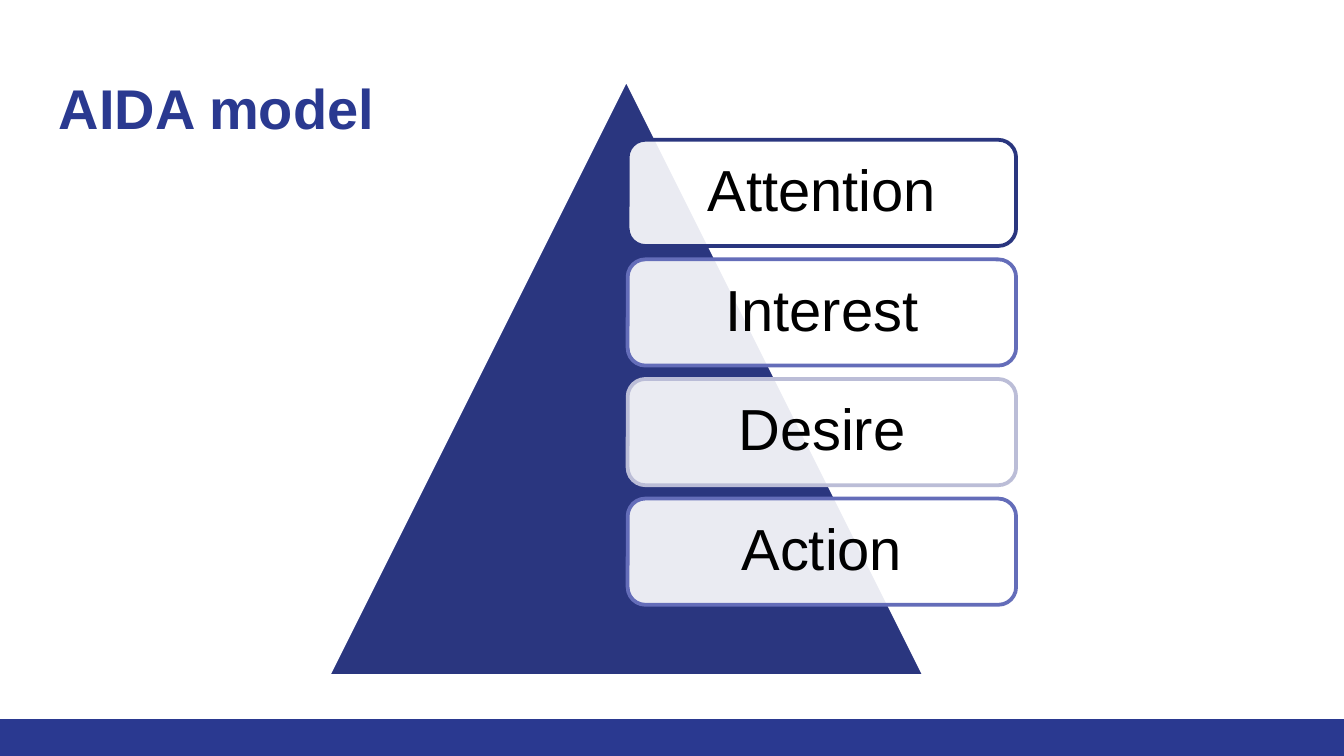
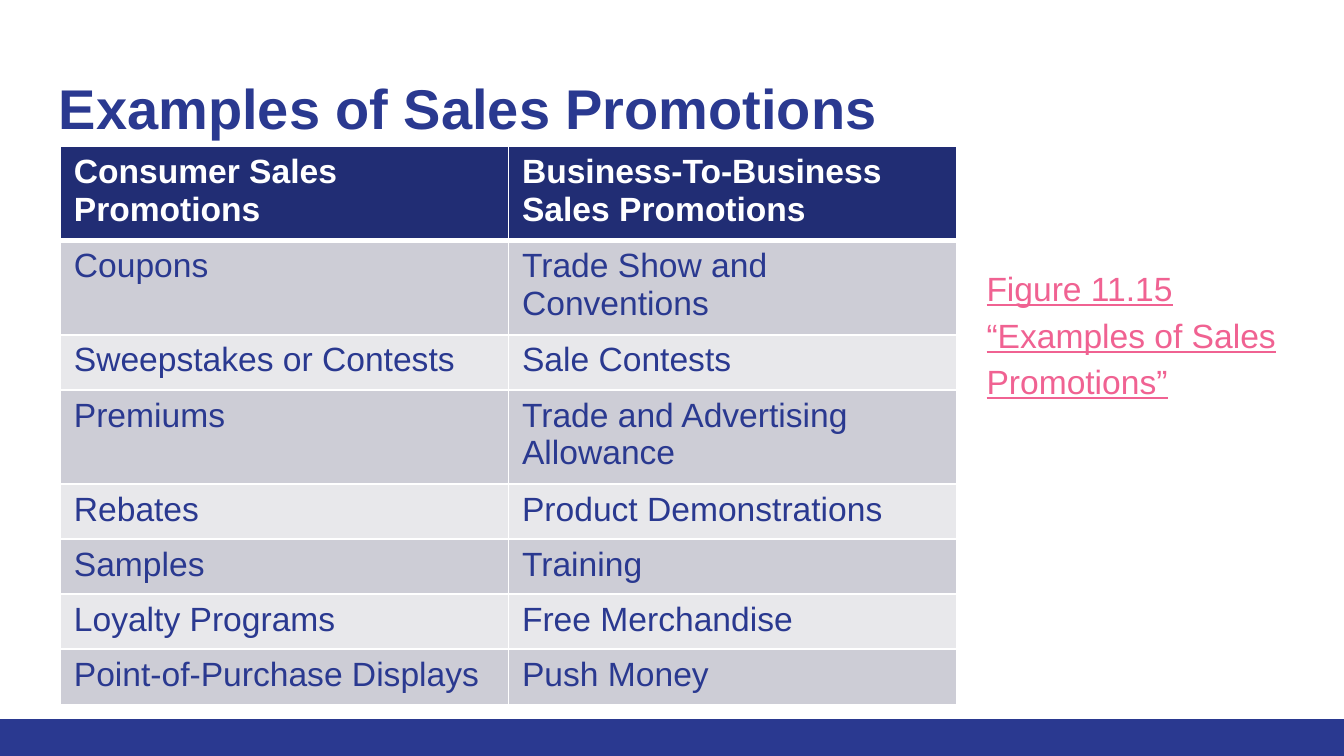
from dataclasses import dataclass
from typing import Optional

from lxml import etree
from pptx import Presentation
from pptx.dml.color import RGBColor
from pptx.enum.shapes import MSO_SHAPE
from pptx.enum.text import MSO_ANCHOR, PP_ALIGN
from pptx.oxml.ns import qn
from pptx.util import Inches, Pt

RECTANGLE = MSO_SHAPE.RECTANGLE
TRIANGLE = MSO_SHAPE.ISOSCELES_TRIANGLE
ROUNDED = MSO_SHAPE.ROUNDED_RECTANGLE
LEFT, CENTER = PP_ALIGN.LEFT, PP_ALIGN.CENTER
TOP, MIDDLE = MSO_ANCHOR.TOP, MSO_ANCHOR.MIDDLE

FONT = "Arial"
INDIGO = "2A3990"
NAVY = "2A367F"
HEADER_NAVY = "212D74"
PERIWINKLE = "646DB9"
LAVENDER = "BBBDD7"
ROW_FILLS = ("CDCDD6", "E8E8EB")
PINK = "F06292"
WHITE = "FFFFFF"
BLACK = "000000"


@dataclass(frozen=True)
class Box:
    left: float
    top: float
    width: float
    height: float

    def lengths(self):
        return [Inches(v) for v in (self.left, self.top, self.width, self.height)]


@dataclass(frozen=True)
class Stage:
    label: str
    outline: str


BAND = Box(0, 5.35, 10, 0.28)
TITLE = Box(0.34, 0.45, 9.32, 0.66)
PYRAMID = Box(2.44, 0.59, 4.44, 4.44)
FIRST_STAGE = Box(4.67, 1.04, 2.89, 0.79)
STAGE_PITCH = 0.89
PROMOTIONS = Box(0.45, 1.09, 6.67, 3.45)
CAPTION = Box(7.12, 1.85, 2.75, 1.56)
HEADER_HEIGHT, ROW_HEIGHT = 0.58, 0.41

STAGES = (
    Stage("Attention", NAVY),
    Stage("Interest", PERIWINKLE),
    Stage("Desire", LAVENDER),
    Stage("Action", PERIWINKLE),
)
PROMOTION_ROWS = (
    ("Consumer Sales Promotions", "Business-To-Business Sales Promotions"),
    ("Coupons", "Trade Show and Conventions"),
    ("Sweepstakes or Contests", "Sale Contests"),
    ("Premiums", "Trade and Advertising Allowance"),
    ("Rebates", "Product Demonstrations"),
    ("Samples", "Training"),
    ("Loyalty Programs", "Free Merchandise"),
    ("Point-of-Purchase Displays", "Push Money"),
)


def rgb(value: str) -> RGBColor:
    return RGBColor.from_string(value)


def write(frame, text: str, *, size: float, color: str, bold=False,
          underline=False, align=LEFT, spacing: Optional[float] = None) -> None:
    paragraph = frame.paragraphs[0]
    paragraph.alignment = align
    paragraph.line_spacing = spacing
    run = paragraph.add_run()
    run.text = text
    run.font.name = FONT
    run.font.size = Pt(size)
    run.font.bold = bold
    run.font.underline = underline
    run.font.color.rgb = rgb(color)


def set_insets(frame, inset: float, anchor, indent: float = 0) -> None:
    frame.word_wrap = True
    frame.margin_left = Inches(inset + indent)
    frame.margin_top = frame.margin_right = frame.margin_bottom = Inches(inset)
    frame.vertical_anchor = anchor


def add_text(slide, box: Box, text: str, indent: float = 0, **style) -> None:
    frame = slide.shapes.add_textbox(*box.lengths()).text_frame
    set_insets(frame, 0.1, TOP, indent)
    write(frame, text, **style)


def add_filled(slide, kind, box: Box, fill: str, outline: str = "", opacity: int = 100):
    shape = slide.shapes.add_shape(kind, *box.lengths())
    shape.shadow.inherit = False
    shape.fill.solid()
    shape.fill.fore_color.rgb = rgb(fill)
    if opacity < 100:
        tint = shape.fill._xPr.find(qn("a:solidFill"))[0]
        etree.SubElement(tint, qn("a:alpha"), val=str(opacity * 1000))
    if outline:
        shape.line.color.rgb = rgb(outline)
        shape.line.width = Pt(2)
    else:
        shape.line.fill.background()
    return shape


def set_border(cell, side: str, width: float) -> None:
    properties = cell._tc.get_or_add_tcPr()
    line = etree.SubElement(properties, qn(f"a:ln{side}"), w=str(Pt(width)))
    fill = etree.SubElement(line, qn("a:solidFill"))
    etree.SubElement(fill, qn("a:srgbClr"), val=WHITE)


def add_titled_slide(prs, title: str):
    slide = prs.slides.add_slide(prs.slide_layouts[6])
    add_filled(slide, RECTANGLE, BAND, INDIGO)
    add_text(slide, TITLE, title, size=30, color=INDIGO, bold=True)
    return slide


def add_stage(slide, index: int, stage: Stage) -> None:
    first = FIRST_STAGE
    box = Box(first.left, first.top + index * STAGE_PITCH, first.width, first.height)
    card = add_filled(slide, ROUNDED, box, WHITE, stage.outline, opacity=90)
    set_insets(card.text_frame, 0.13, MIDDLE)
    write(card.text_frame, stage.label, size=31, color=BLACK, align=CENTER, spacing=0.9)


def add_promotions_table(slide) -> None:
    columns = len(PROMOTION_ROWS[0])
    table = slide.shapes.add_table(
        len(PROMOTION_ROWS), columns, *PROMOTIONS.lengths()).table
    for column in table.columns:
        column.width = Inches(PROMOTIONS.width / columns)
    for r, labels in enumerate(PROMOTION_ROWS):
        header = r == 0
        table.rows[r].height = Inches(HEADER_HEIGHT if header else ROW_HEIGHT)
        for c, label in enumerate(labels):
            cell = table.cell(r, c)
            widths = {"L": 1, "R": 1, "T": 3 if r == 1 else 1, "B": 3 if header else 1}
            for side, width in widths.items():
                set_border(cell, side, width)
            cell.fill.solid()
            cell.fill.fore_color.rgb = rgb(HEADER_NAVY if header else ROW_FILLS[(r - 1) % 2])
            write(cell.text_frame, label, size=18, bold=header,
                  color=WHITE if header else INDIGO)


def build_aida(prs) -> None:
    slide = add_titled_slide(prs, "AIDA model")
    add_filled(slide, TRIANGLE, PYRAMID, NAVY, WHITE)
    for index, stage in enumerate(STAGES):
        add_stage(slide, index, stage)


def build_promotions(prs) -> None:
    slide = add_titled_slide(prs, "Examples of Sales Promotions")
    add_text(slide, CAPTION, "Figure 11.15 “Examples of Sales Promotions”",
             indent=0.12, size=18, color=PINK, underline=True, spacing=1.15)
    add_promotions_table(slide)


def main() -> None:
    prs = Presentation()
    prs.slide_width = Inches(10)
    prs.slide_height = prs.slide_width * 9 // 16
    build_aida(prs)
    build_promotions(prs)
    prs.save("out.pptx")


if __name__ == "__main__":
    main()
